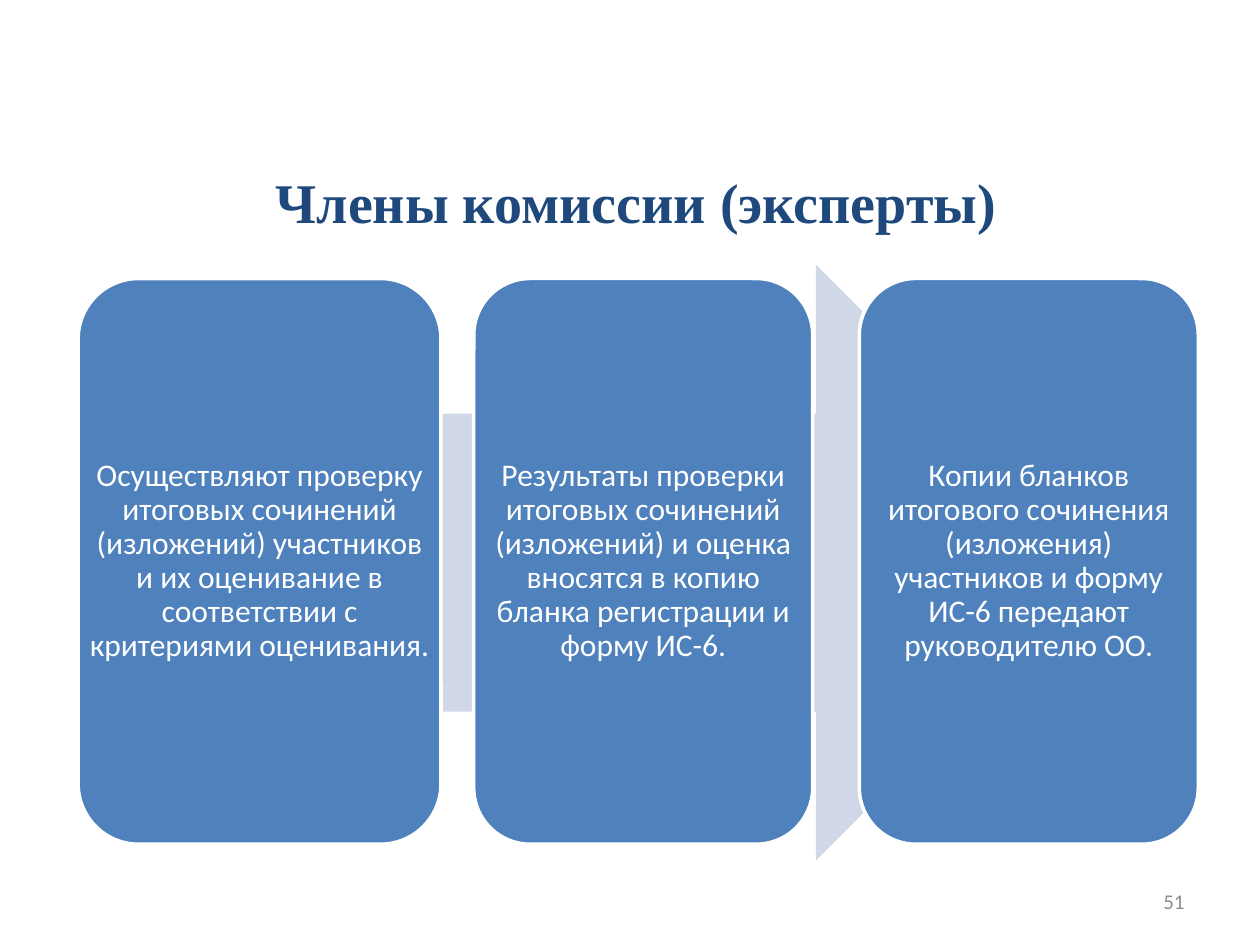
import pptx
import pptx.util
import pptx.dml.color
import pptx.enum.shapes
import pptx.enum.text

TITLE = "Члены комиссии (эксперты)"
PAGE_NUMBER = "51"
STEPS = [
    {"left": 6.2, "width": 28.8,
     "text": "Осуществляют проверку итоговых сочинений (изложений) участников "
             "и их оценивание в соответствии с критериями оценивания."},
    {"left": 37.6, "width": 26.9,
     "text": "Результаты проверки итоговых сочинений (изложений) и оценка "
             "вносятся в копию бланка регистрации и форму ИС-6."},
    {"left": 68.2, "width": 26.9,
     "text": "Копии бланков итогового сочинения (изложения) участников "
             "и форму ИС-6 передают руководителю ОО."},
]
COLORS = {"title": "1F497D", "card": "4F81BD", "arrow": "D0D8E8",
          "white": "FFFFFF", "number": "8C8C8C"}
CARD_TOP, CARD_HEIGHT = 29.47, 59.87

SHAPES = pptx.enum.shapes.MSO_SHAPE
ALIGN = pptx.enum.text.PP_ALIGN

deck = pptx.Presentation()
deck.slide_width = pptx.util.Inches(10)
deck.slide_height = pptx.util.Inches(7.5)
slide = deck.slides.add_slide(deck.slide_layouts[6])


def color(name):
    return pptx.dml.color.RGBColor.from_string(COLORS[name])


def area(left, top, width, height):
    return (int(deck.slide_width * left / 100), int(deck.slide_height * top / 100),
            int(deck.slide_width * width / 100), int(deck.slide_height * height / 100))


def add_text(text, *, box, size, tint, font="Calibri", bold=False,
             align=ALIGN.CENTER, spacing=1.0, inset=None):
    frame = slide.shapes.add_textbox(*area(*box)).text_frame
    frame.word_wrap = True
    frame.vertical_anchor = pptx.enum.text.MSO_ANCHOR.MIDDLE
    if inset is not None:
        frame.margin_left = frame.margin_right = pptx.util.Inches(inset)
        frame.margin_top = frame.margin_bottom = pptx.util.Inches(inset)
    paragraph = frame.paragraphs[0]
    paragraph.text = text
    paragraph.alignment = align
    paragraph.line_spacing = spacing
    paragraph.font.name = font
    paragraph.font.size = pptx.util.Pt(size)
    paragraph.font.bold = bold
    paragraph.font.color.rgb = color(tint)


def add_panel(preset, box, fill, outline=None):
    panel = slide.shapes.add_shape(preset, *area(*box))
    panel.shadow.inherit = False
    panel.fill.solid()
    panel.fill.fore_color.rgb = color(fill)
    if outline:
        panel.line.color.rgb = color(outline)
        panel.line.width = pptx.util.Pt(2)
    else:
        panel.line.fill.background()


add_text(PAGE_NUMBER, box=(71.7, 92.67, 23.3, 5.33), size=12, tint="number",
         align=ALIGN.RIGHT)
add_text(TITLE, box=(5.5, 16.67, 90, 9.2), size=32, tint="title",
         font="Times New Roman", bold=True)
add_panel(SHAPES.RIGHT_ARROW, (11.9, 28, 76.5, 63.07), "arrow")
for step in STEPS:
    card = (step["left"], CARD_TOP, step["width"], CARD_HEIGHT)
    add_panel(SHAPES.ROUNDED_RECTANGLE, card, "card", outline="white")
    add_text(step["text"], box=card, size=18, tint="white", spacing=0.9, inset=0.07)

deck.save("out.pptx")
